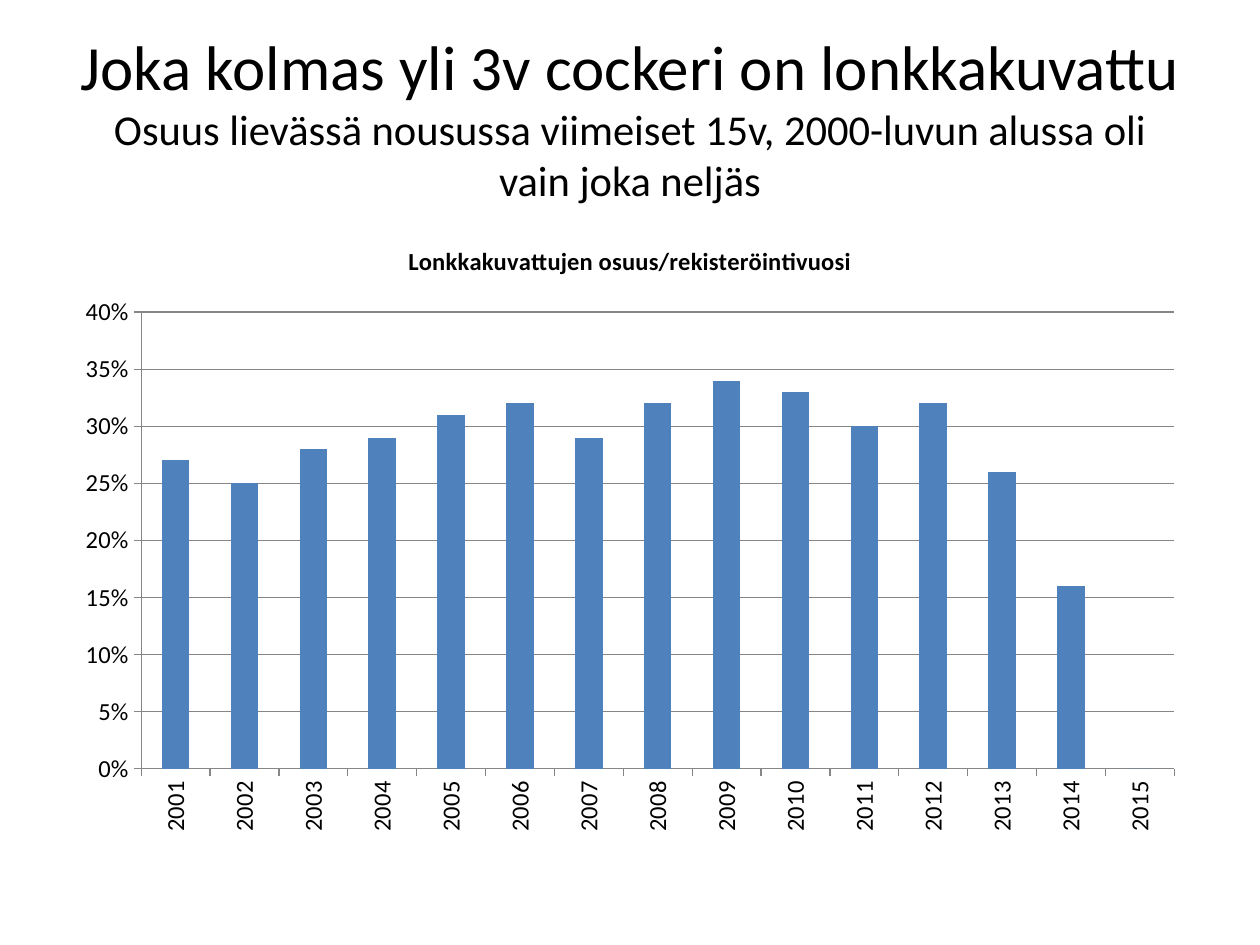
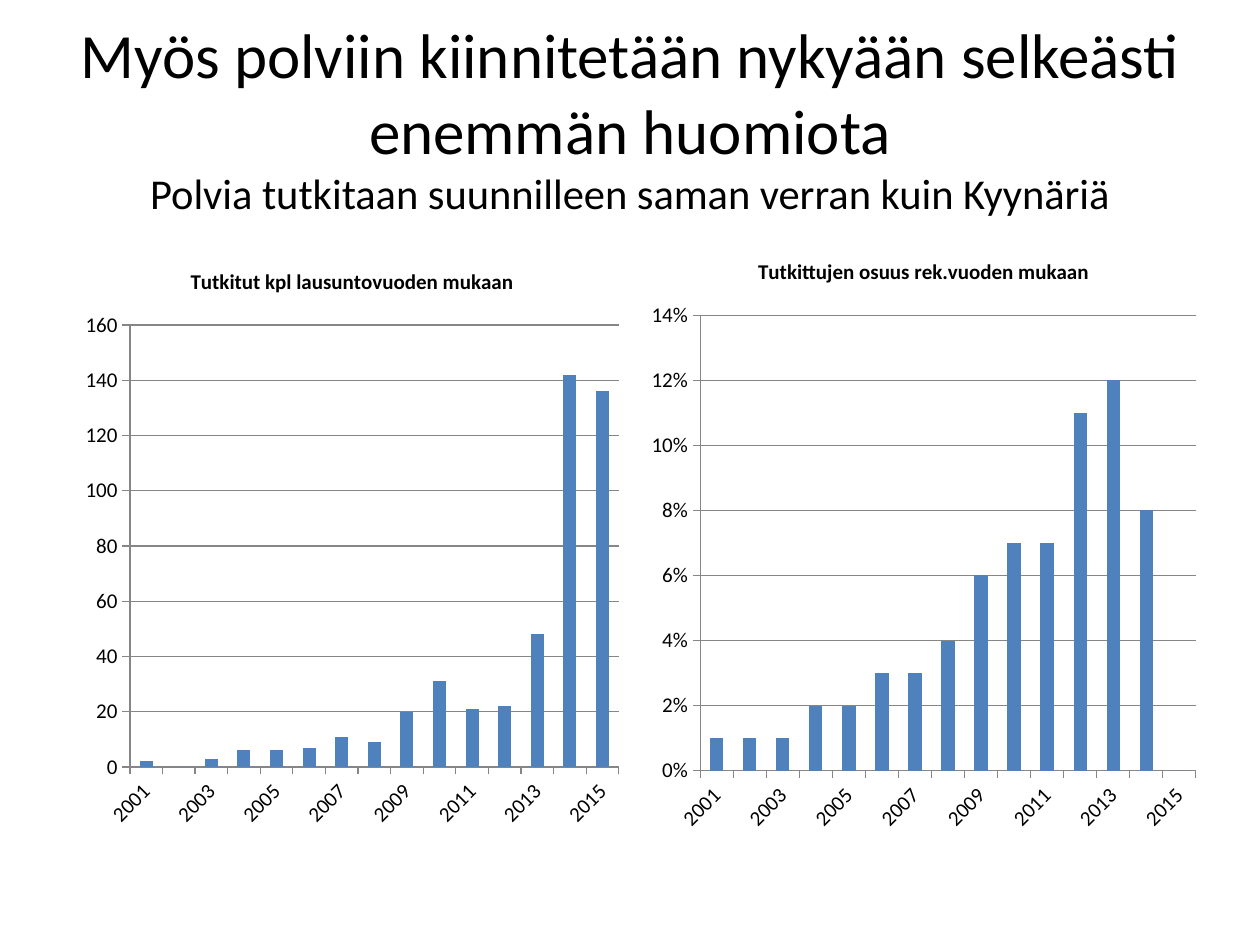
from pptx import Presentation
from pptx.chart.data import CategoryChartData
from pptx.dml.color import RGBColor
from pptx.enum.chart import XL_CHART_TYPE, XL_TICK_MARK
from pptx.enum.text import MSO_ANCHOR, PP_ALIGN
from pptx.oxml.ns import qn
from pptx.util import Pt

COLUMN = XL_CHART_TYPE.COLUMN_CLUSTERED
OUT = XL_TICK_MARK.OUTSIDE
NONE = XL_TICK_MARK.NONE
MIDDLE = MSO_ANCHOR.MIDDLE
CENTER = PP_ALIGN.CENTER

FONT = "Calibri"
HUES = {"text": "000000", "bar": "4F81BD", "line": "868686"}
YEARS = [str(year) for year in range(2001, 2016)]
HEAD = (36, 21.6, 648, 90)


def hue(name):
    return RGBColor.from_string(HUES[name])


def style(font, size, bold=False):
    font.name = FONT
    font.size = Pt(size)
    font.bold = bold
    font.color.rgb = hue("text")


def rule(line):
    line.color.rgb = hue("line")
    line.width = Pt(0.75)


def add_head(slide, box, main, sub):
    frame = slide.shapes.add_textbox(*map(Pt, box)).text_frame
    frame.word_wrap = True
    frame.vertical_anchor = MIDDLE
    para = frame.paragraphs[0]
    para.alignment = CENTER
    run = para.add_run()
    run.text = main
    style(run.font, 36)
    para.add_line_break()
    run = para.add_run()
    run.text = sub
    style(run.font, 24.3)


def add_bars(slide, box, title, vals, size, turn, top, step, form):
    data = CategoryChartData(number_format=form)
    data.categories = YEARS
    data.add_series("Series 1", vals)
    chart = slide.shapes.add_chart(COLUMN, *map(Pt, box), data).chart
    style(chart.font, 10)
    chart.has_legend = False
    chart.has_title = True
    chart.chart_title.include_in_layout = False
    run = chart.chart_title.text_frame.paragraphs[0].add_run()
    run.text = title
    style(run.font, size, True)

    plot = chart.plots[0]
    plot.gap_width = 150
    plot.vary_by_categories = False
    fill = plot.series[0].format.fill
    fill.solid()
    fill.fore_color.rgb = hue("bar")

    for axis in (chart.category_axis, chart.value_axis):
        axis.major_tick_mark = OUT
        axis.minor_tick_mark = NONE
        style(axis.tick_labels.font, size)
        rule(axis.format.line)
    body = chart.category_axis._element.find(".//" + qn("a:bodyPr"))
    body.set("rot", str(turn * 60000))
    body.set("vert", "horz")

    axis = chart.value_axis
    axis.minimum_scale = 0
    axis.maximum_scale = top
    axis.major_unit = step
    axis.has_major_gridlines = True
    rule(axis.major_gridlines.format.line)
    axis.tick_labels.number_format = form
    axis.tick_labels.number_format_is_linked = False


def hip_slide(slide):
    add_head(slide, HEAD, "Joka kolmas yli 3v cockeri on lonkkakuvattu",
             "Osuus lievässä nousussa viimeiset 15v, 2000-luvun alussa oli "
             "vain joka neljäs")
    add_bars(slide, (36, 126, 648, 356.4),
             "Lonkkakuvattujen osuus/rekisteröintivuosi",
             [0.27, 0.25, 0.28, 0.29, 0.31, 0.32, 0.29, 0.32, 0.34, 0.33,
              0.3, 0.32, 0.26, 0.16, 0],
             14, -90, 0.4, 0.05, "0%")


def knee_slide(slide):
    add_head(slide, HEAD,
             "Myös polviin kiinnitetään nykyään selkeästi enemmän huomiota",
             "Polvia tutkitaan suunnilleen saman verran kuin Kyynäriä")
    add_bars(slide, (42.5, 139.7, 317.5, 339.8),
             "Tutkitut kpl lausuntovuoden mukaan",
             [2, 0, 3, 6, 6, 7, 11, 9, 20, 31, 21, 22, 48, 142, 136],
             12, -45, 160, 20, "General")
    add_bars(slide, (365.8, 133.9, 324, 347.8),
             "Tutkittujen osuus rek.vuoden mukaan",
             [0.01, 0.01, 0.01, 0.02, 0.02, 0.03, 0.03, 0.04, 0.06, 0.07,
              0.07, 0.11, 0.12, 0.08, 0],
             12, -45, 0.14, 0.02, "0%")


def main():
    deck = Presentation()
    deck.slide_width = Pt(720)
    deck.slide_height = Pt(540)
    for build in (hip_slide, knee_slide):
        build(deck.slides.add_slide(deck.slide_layouts[6]))
    deck.save("out.pptx")


if __name__ == "__main__":
    main()
